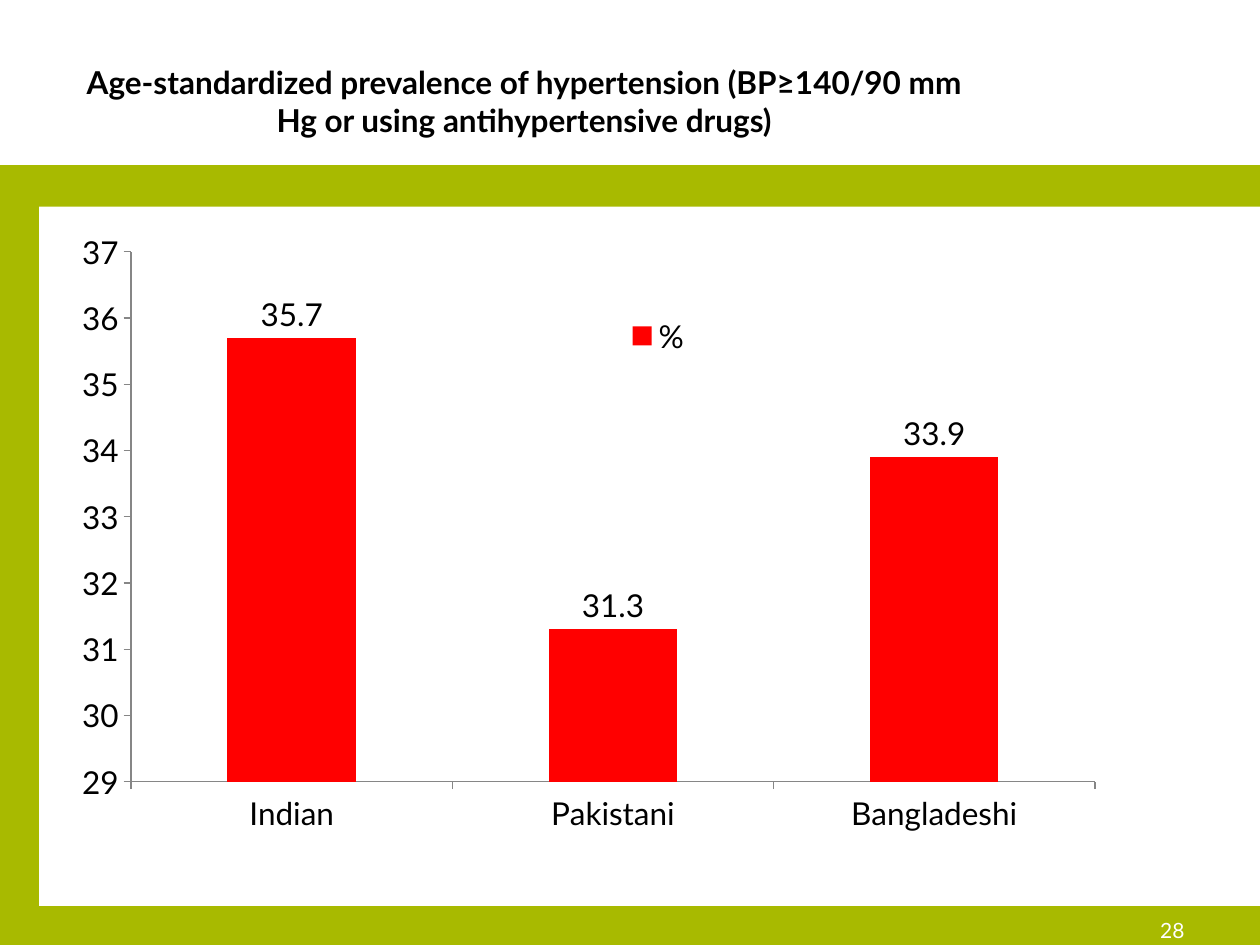
import pptx
import pptx.util
import pptx.oxml
import pptx.chart.data
import pptx.dml.color
import pptx.enum.chart
import pptx.enum.shapes
import pptx.enum.text
from pptx.util import Inches

COLORS = {"green": "A8BA00", "white": "FFFFFF", "black": "000000", "red": "FF0000", "axis": "868686"}
FONT = "Lato"


def style(font, size, color, bold=False):
    font.name = FONT
    font.size = pptx.util.Pt(size)
    font.bold = bold
    font.color.rgb = pptx.dml.color.RGBColor.from_string(COLORS[color])


def place(parent, index, target, **fractions):
    for old in parent.findall("{*}layout"):
        parent.remove(old)
    inner = f'<c:layoutTarget val="{target}"/>' if target else ""
    modes = '<c:xMode val="edge"/><c:yMode val="edge"/>'
    sizes = "".join(f'<c:{key} val="{value}"/>' for key, value in fractions.items())
    parent.insert(index, pptx.oxml.parse_xml(
        '<c:layout xmlns:c="http://schemas.openxmlformats.org/drawingml/2006/chart">'
        f"<c:manualLayout>{inner}{modes}{sizes}</c:manualLayout></c:layout>"))


deck = pptx.Presentation()
deck.slide_width, deck.slide_height = Inches(10), Inches(7.5)
slide = deck.slides.add_slide(deck.slide_layouts[5])

for color, left, top, width, height in [
    ("green", 0, 1.31, 10, 6.19),
    ("white", 0.31, 1.64, 9.69, 5.55),
]:
    panel = slide.shapes.add_shape(pptx.enum.shapes.MSO_SHAPE.RECTANGLE,
                                   Inches(left), Inches(top), Inches(width), Inches(height))
    panel.shadow.inherit = False
    panel.fill.solid()
    panel.fill.fore_color.rgb = pptx.dml.color.RGBColor.from_string(COLORS[color])
    panel.line.fill.background()

title = slide.shapes.title
title.left, title.top, title.width, title.height = Inches(0.5), Inches(0.3), Inches(7.32), Inches(1)
title.text_frame.text = "Age-standardized prevalence of hypertension (BP≥140/90 mm Hg or using antihypertensive drugs)"
title.text_frame.word_wrap = True
title.text_frame.vertical_anchor = pptx.enum.text.MSO_ANCHOR.MIDDLE
title.text_frame.paragraphs[0].alignment = pptx.enum.text.PP_ALIGN.CENTER
style(title.text_frame.paragraphs[0].runs[0].font, 18, "black", bold=True)

prevalence = pptx.chart.data.CategoryChartData(number_format="General")
prevalence.categories = ["Indian", "Pakistani", "Bangladeshi"]
prevalence.add_series("%", [35.7, 31.3, 33.9])
chart = slide.shapes.add_chart(pptx.enum.chart.XL_CHART_TYPE.COLUMN_CLUSTERED,
                               Inches(0.5), Inches(1.75), Inches(9), Inches(4.95), prevalence).chart
style(chart.font, 18, "black")
chart.has_title = False
place(chart._chartSpace.chart.plotArea, 0, "inner", x=0.06, y=0.05, w=0.85, h=0.85)

chart.has_legend = True
chart.legend.position = pptx.enum.chart.XL_LEGEND_POSITION.RIGHT
chart.legend.include_in_layout = False
place(chart.legend._element, 1, None, x=0.49, y=0.14, w=0.07, h=0.09)

for axis in (chart.category_axis, chart.value_axis):
    axis.has_major_gridlines = False
    axis.major_tick_mark = pptx.enum.chart.XL_TICK_MARK.OUTSIDE
    axis.format.line.width = pptx.util.Pt(0.75)
    axis.format.line.color.rgb = pptx.dml.color.RGBColor.from_string(COLORS["axis"])
chart.value_axis.minimum_scale = 29
chart.value_axis.maximum_scale = 37
chart.value_axis.major_unit = 1

columns = chart.plots[0]
columns.gap_width = 150
columns.vary_by_categories = False
percent = columns.series[0]
percent.format.fill.solid()
percent.format.fill.fore_color.rgb = pptx.dml.color.RGBColor.from_string(COLORS["red"])
percent.data_labels.show_value = True
percent.data_labels.position = pptx.enum.chart.XL_LABEL_POSITION.OUTSIDE_END
style(percent.data_labels.font, 18, "black")

page_number = slide.shapes.add_textbox(Inches(7.17), Inches(7.18), Inches(2.33), Inches(0.4)).text_frame
page_number.word_wrap = True
page_number.vertical_anchor = pptx.enum.text.MSO_ANCHOR.MIDDLE
page_number.text = "28"
page_number.paragraphs[0].alignment = pptx.enum.text.PP_ALIGN.RIGHT
style(page_number.paragraphs[0].runs[0].font, 12, "white")

deck.save("out.pptx")
